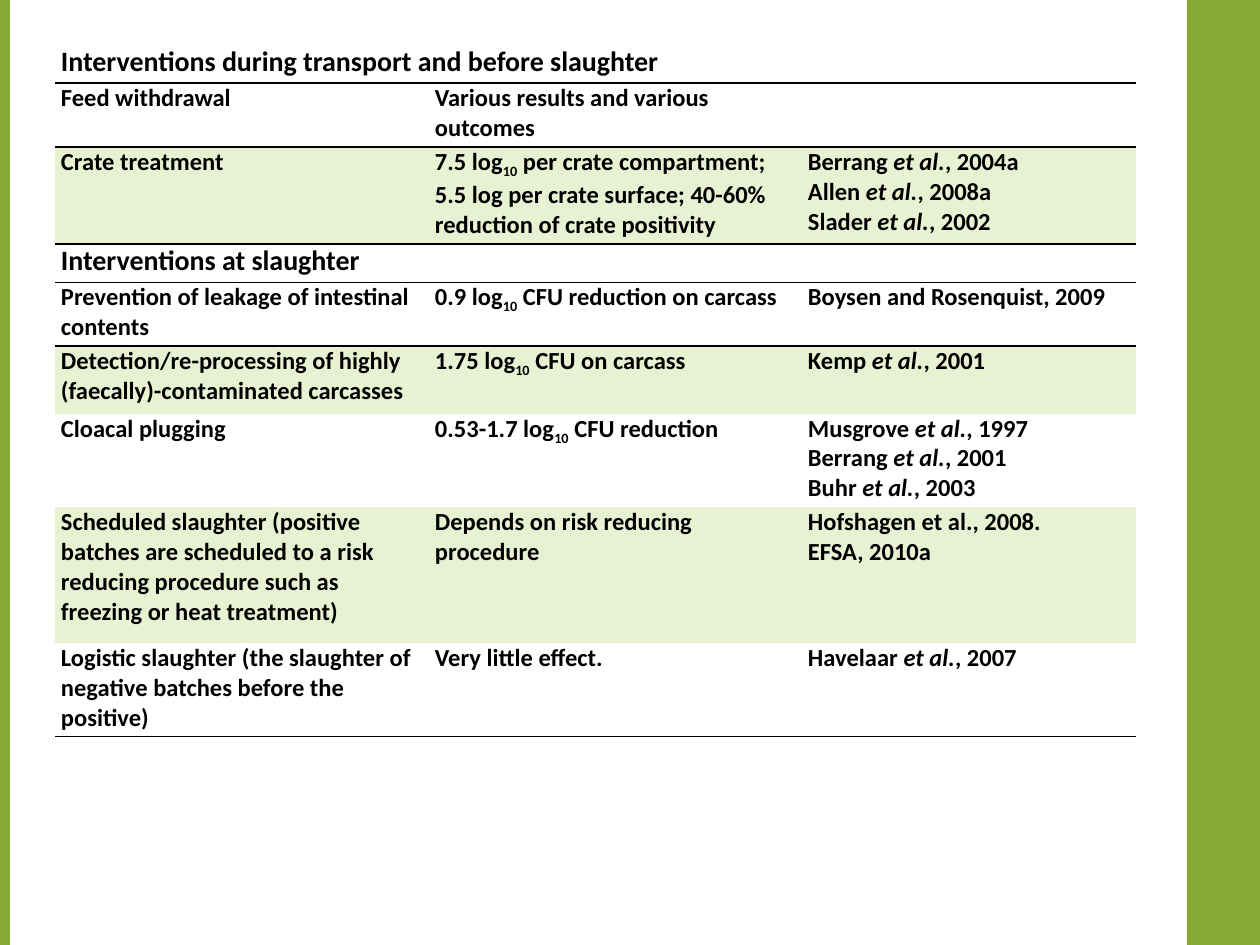
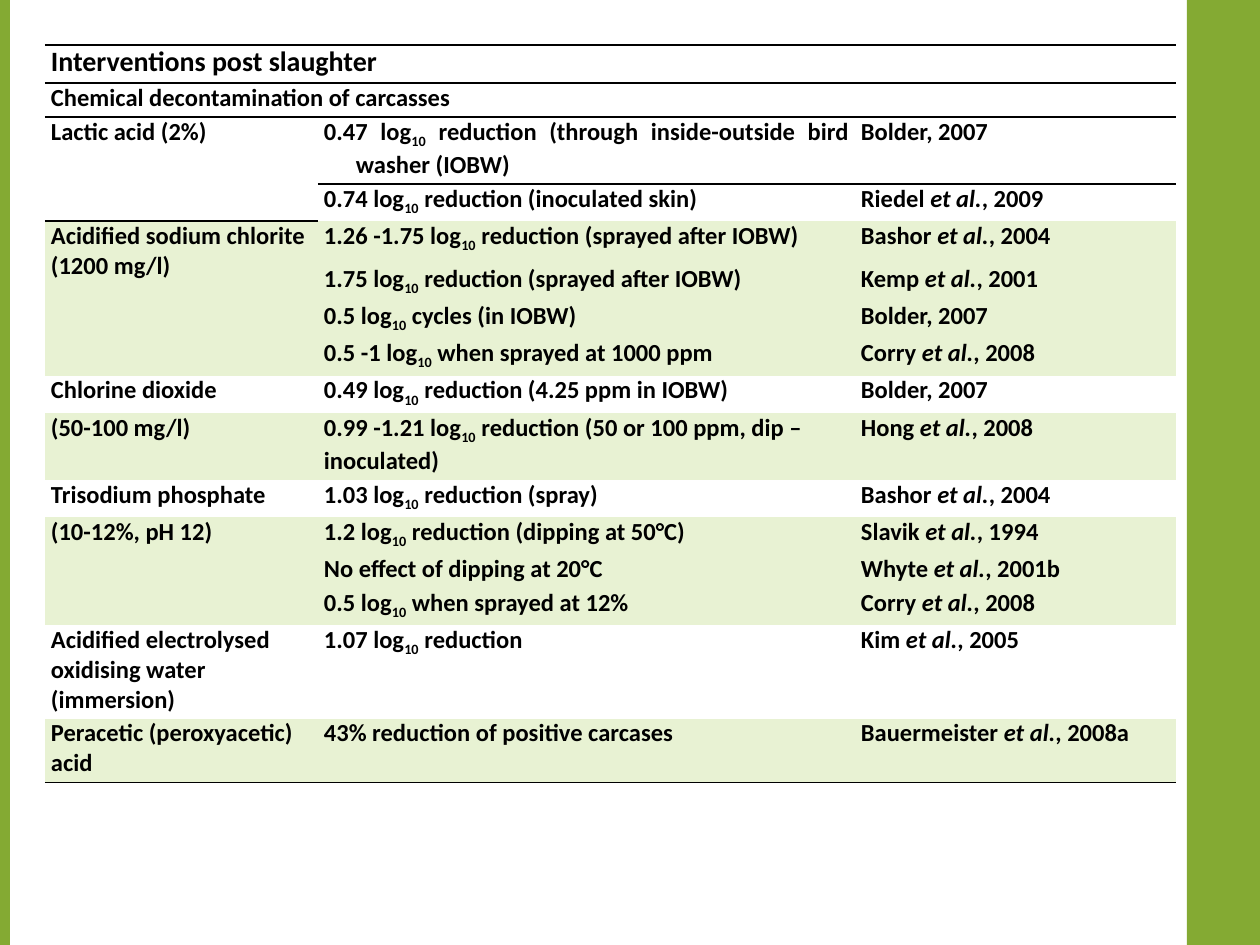
from dataclasses import dataclass

from lxml.etree import SubElement
from pptx import Presentation
from pptx.dml.color import RGBColor
from pptx.enum.shapes import MSO_SHAPE
from pptx.enum.text import PP_ALIGN
from pptx.oxml.ns import qn
from pptx.util import Pt

EMU_PER_PX = 914400 / 126
SLIDE_WIDTH, SLIDE_HEIGHT = 1260, 945
PLAIN_TABLE_STYLE = "{2D5ABB26-0587-4C30-8999-92F81FD0307C}"


@dataclass(frozen=True)
class Theme:
    """Colours, font and type sizes of the deck."""
    side_band: RGBColor = RGBColor(0x84, 0xAA, 0x33)
    row_band: RGBColor = RGBColor(0xE8, 0xF2, 0xD3)
    ink: RGBColor = RGBColor(0, 0, 0)
    font: str = "Calibri"
    section_size: Pt = Pt(16)
    entry_size: Pt = Pt(14)
    rule_width: Pt = Pt(1)


@dataclass(frozen=True)
class Row:
    """One table row; one text makes a section, None continues the cell above."""
    height: int
    texts: tuple
    banded: bool = False


THEME = Theme()

BEFORE_AND_AT_SLAUGHTER = [
    Row(38, ("Interventions during transport and before slaughter",)),
    Row(64, ("Feed withdrawal", "Various results and various outcomes", "")),
    Row(95, ("Crate treatment",
             "7.5 log|10| per crate compartment; 5.5 log per crate surface; "
             "40-60% reduction of crate positivity",
             "Berrang| et al.|, 2004a\nAllen| et al.|, 2008a\nSlader| et al.|, 2002"), True),
    Row(38, ("Interventions at slaughter",)),
    Row(63, ("Prevention of leakage of intestinal contents",
             "0.9 log|10| CFU reduction on carcass", "Boysen and Rosenquist, 2009")),
    Row(68, ("Detection/re-processing of highly (faecally)-contaminated carcasses",
             "1.75 log|10| CFU on carcass", "Kemp| et al.|, 2001"), True),
    Row(93, ("Cloacal plugging", "0.53-1.7 log|10| CFU reduction",
             "Musgrove| et al.|, 1997\nBerrang| et al.|, 2001\nBuhr| et al.|, 2003")),
    Row(136, ("Scheduled slaughter (positive batches are scheduled to a risk reducing "
              "procedure such as freezing or heat treatment)",
              "Depends on risk reducing procedure",
              "Hofshagen et al., 2008.\nEFSA, 2010a"), True),
    Row(93, ("Logistic slaughter (the slaughter of negative batches before the positive)",
             "Very little effect.", "Havelaar| et al.|, 2007")),
]

POST_SLAUGHTER = [
    Row(38, ("Interventions post slaughter",)),
    Row(33, ("Chemical decontamination of carcasses",)),
    Row(67, ("Lactic acid (2%)",
             "0.47 log|10| reduction (through inside-outside bird washer (IOBW)",
             "Bolder, 2007")),
    Row(37, (None, "0.74 log|10| reduction (inoculated skin)", "Riedel| et al.|, 2009")),
    Row(43, ("Acidified sodium chlorite (1200 mg/l)",
             "1.26 -1.75 log|10| reduction (sprayed after IOBW)",
             "Bashor| et al.|, 2004"), True),
    Row(36, (None, "1.75 log|10| reduction (sprayed after IOBW)", "Kemp| et al.|, 2001"), True),
    Row(37, (None, "0.5 log|10| cycles (in IOBW)", "Bolder, 2007"), True),
    Row(36, (None, "0.5 -1 log|10| when sprayed at 1000 ppm", "Corry| et al.|, 2008"), True),
    Row(37, ("Chlorine dioxide", "0.49 log|10| reduction (4.25 ppm in IOBW)", "Bolder, 2007")),
    Row(66, ("(50-100 mg/l)", "0.99 -1.21 log|10| reduction (50 or 100 ppm, dip – inoculated)",
             "Hong| et al.|, 2008"), True),
    Row(37, ("Trisodium phosphate", "1.03 log|10| reduction (spray)", "Bashor| et al.|, 2004")),
    Row(36, ("(10-12%, pH 12)", "1.2 log|10| reduction (dipping at 50°C)",
             "Slavik| et al.|, 1994"), True),
    Row(34, ("", "No effect of dipping at 20°C", "Whyte| et al.|, 2001b"), True),
    Row(36, (None, "0.5 log|10| when sprayed at 12%", "Corry| et al.|, 2008"), True),
    Row(93, ("Acidified electrolysed oxidising water (immersion)", "1.07 log|10| reduction",
             "Kim| et al.|, 2005")),
    Row(63, ("Peracetic (peroxyacetic) acid", "43% reduction of positive carcases",
             "Bauermeister| et al.|, 2008a"), True),
]


def px(length):
    """Turn pixels into EMU."""
    return round(length * EMU_PER_PX)


def add_side_band(prs, slide, left, width, shape_id):
    """Put a full-height colour band on the slide master."""
    band = slide.shapes.add_shape(
        MSO_SHAPE.RECTANGLE, px(left), 0, px(width), px(SLIDE_HEIGHT))
    band.shadow.inherit = False
    band.fill.solid()
    band.fill.fore_color.rgb = THEME.side_band
    band.line.fill.background()
    band.element.nvSpPr.cNvPr.set("id", str(shape_id))
    prs.slide_master.element.cSld.spTree.insert(2, band.element)


def write_paragraph(paragraph, marked_text, size):
    """Write text whose parts between bars are subscript digits or italics."""
    for index, part in enumerate(marked_text.split("|")):
        run = paragraph.add_run()
        run.text = part
        run.font.name = THEME.font
        run.font.size = size
        run.font.bold = True
        run.font.color.rgb = THEME.ink
        if index % 2 and part.isdigit():
            run.font._element.set("baseline", "-25000")
        elif index % 2:
            run.font.italic = True


def write_cell(cell, text, size):
    """Fill a cell with one paragraph per line of text."""
    cell.margin_left = cell.margin_right = px(6)
    cell.margin_top, cell.margin_bottom = 0, px(4)
    if not text:
        SubElement(cell.text_frame.paragraphs[0]._p, qn("a:endParaRPr"), sz=str(int(size.pt * 100)))
        return
    for index, line in enumerate(text.split("\n")):
        frame = cell.text_frame
        paragraph = frame.add_paragraph() if index else frame.paragraphs[0]
        write_paragraph(paragraph, line, size)


def rule_edge(cell, edge):
    """Draw a rule along the lnT or lnB edge of a cell."""
    rule = SubElement(cell._tc.get_or_add_tcPr(), qn(f"a:{edge}"), w=str(THEME.rule_width))
    fill = SubElement(rule, qn("a:solidFill"))
    SubElement(fill, qn("a:srgbClr"), val=str(THEME.ink))


def merge_cells(table, rows):
    """Merge section rows across and continued labels downwards."""
    last_column = len(table.columns) - 1
    label_row = 0
    for index, row in enumerate(rows):
        if len(row.texts) == 1:
            table.cell(index, 0).merge(table.cell(index, last_column))
        elif row.texts[0] is not None:
            label_row = index
        elif index + 1 == len(rows) or rows[index + 1].texts[0] is not None:
            table.cell(label_row, 0).merge(table.cell(index, 0))


def add_interventions(slide, left, top, widths, rows, top_rule):
    """Build an interventions table at the given corner and return it."""
    frame = slide.shapes.add_table(
        len(rows), len(widths), px(left), px(top),
        px(sum(widths)), px(sum(row.height for row in rows)))
    table = frame.table
    table.first_row = table.horz_banding = False
    next(frame.element.iter(qn("a:tableStyleId"))).text = PLAIN_TABLE_STYLE
    for column, width in zip(table.columns, widths):
        column.width = px(width)

    sections = [index for index, row in enumerate(rows) if len(row.texts) == 1]
    ruled = {len(rows), *sections, *(index + 1 for index in sections)}
    if not top_rule:
        ruled.discard(0)

    for index, row in enumerate(rows):
        table.rows[index].height = px(row.height)
        is_heading = index in sections and row.texts[0].startswith("Interventions")
        size = THEME.section_size if is_heading else THEME.entry_size
        texts = row.texts + ("",) * (len(widths) - len(row.texts))
        for column, text in enumerate(texts):
            cell = table.cell(index, column)
            write_cell(cell, text, size)
            for edge, position in (("lnT", index), ("lnB", index + 1)):
                if position in ruled:
                    rule_edge(cell, edge)
            if row.banded:
                cell.fill.solid()
                cell.fill.fore_color.rgb = THEME.row_band
            else:
                cell.fill.background()
    merge_cells(table, rows)
    return table


def hang_justified(cell, indent):
    """Justify a cell's first paragraph with a hanging indent."""
    paragraph = cell.text_frame.paragraphs[0]
    paragraph.alignment = PP_ALIGN.JUSTIFY
    properties = paragraph._p.get_or_add_pPr()
    properties.set("marL", str(px(indent)))
    properties.set("indent", str(-px(indent)))


def main():
    """Build and save the deck."""
    prs = Presentation()
    prs.slide_width, prs.slide_height = px(SLIDE_WIDTH), px(SLIDE_HEIGHT)
    blank = prs.slide_layouts[6]

    slaughter = prs.slides.add_slide(blank)
    add_side_band(prs, slaughter, 0, 10, 101)
    add_side_band(prs, slaughter, 1187, 73, 102)
    add_interventions(slaughter, 55, 45, (374, 373, 334), BEFORE_AND_AT_SLAUGHTER, False)

    post = prs.slides.add_slide(blank)
    decontamination = add_interventions(post, 45, 45, (273, 537, 321), POST_SLAUGHTER, True)
    hang_justified(decontamination.cell(2, 1), 32)

    prs.save("out.pptx")


if __name__ == "__main__":
    main()
